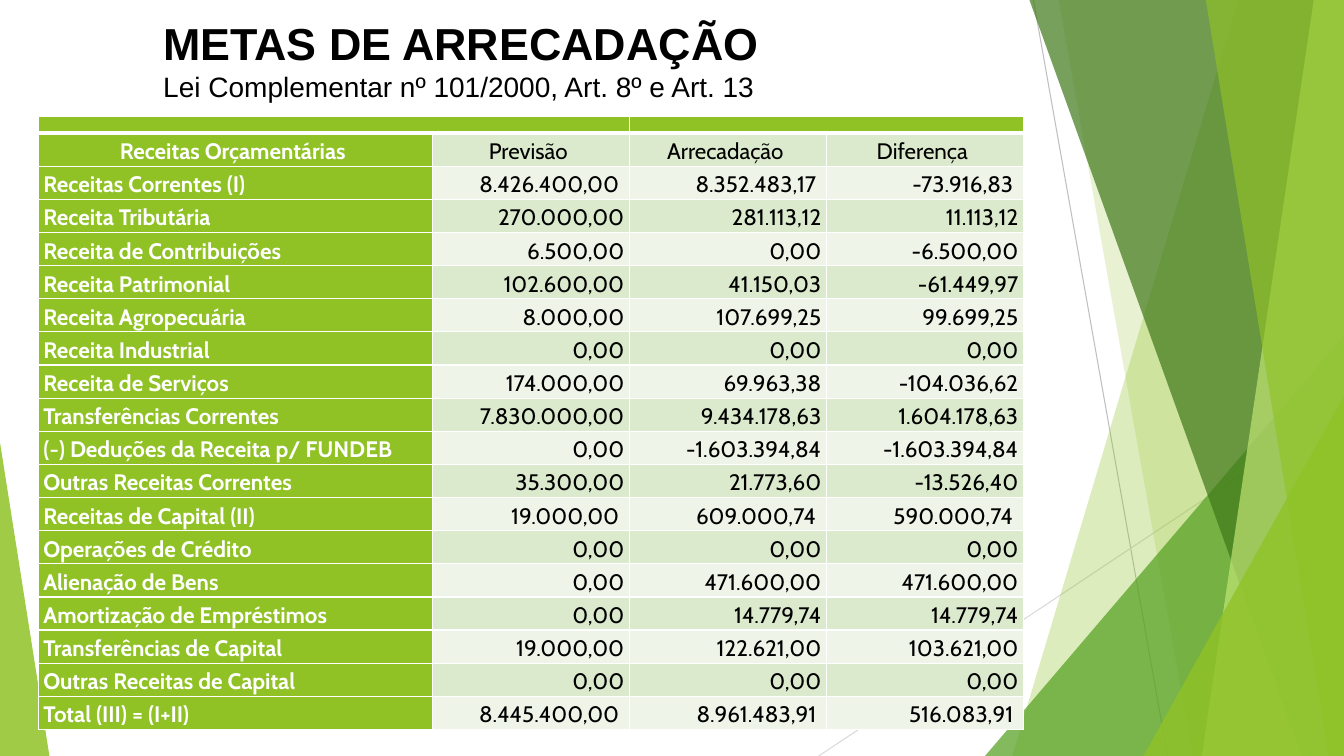
import lxml.etree
import pptx
import pptx.dml.color
import pptx.enum.shapes
import pptx.enum.text
import pptx.oxml.ns
import pptx.util

Inches = pptx.util.Inches
Pt = pptx.util.Pt
qn = pptx.oxml.ns.qn
ALIGN = pptx.enum.text.PP_ALIGN
GREEN, WHITE, BLACK = "90C226", "FFFFFF", "000000"
BANDS = ("DBE9CD", "EEF4E8")

HEADINGS = ("Receitas Orçamentárias ", "Previsão ", "Arrecadação ", "Diferença ")
REVENUES = [
    ("Receitas Correntes (I)", "8.426.400,00 ", "8.352.483,17 ", "-73.916,83 "),
    ("Receita Tributária", "270.000,00", "281.113,12", "11.113,12"),
    ("Receita de Contribuições", "6.500,00", "0,00", "-6.500,00"),
    ("Receita Patrimonial", "102.600,00", "41.150,03", "-61.449,97"),
    ("Receita Agropecuária", "8.000,00", "107.699,25", "99.699,25"),
    ("Receita Industrial", "0,00", "0,00", "0,00"),
    ("Receita de Serviços", "174.000,00", "69.963,38", "-104.036,62"),
    ("Transferências Correntes", "7.830.000,00", "9.434.178,63", "1.604.178,63"),
    ("(-) Deduções da Receita p/ FUNDEB", "0,00", "-1.603.394,84", "-1.603.394,84"),
    ("Outras Receitas Correntes", "35.300,00", "21.773,60", "-13.526,40"),
    ("Receitas de Capital (II)", "19.000,00 ", "609.000,74 ", "590.000,74 "),
    ("Operações de Crédito", "0,00", "0,00", "0,00"),
    ("Alienação de Bens", "0,00", "471.600,00", "471.600,00"),
    ("Amortização de Empréstimos", "0,00", "14.779,74", "14.779,74"),
    ("Transferências de Capital", "19.000,00", "122.621,00", "103.621,00"),
    ("Outras Receitas de Capital", "0,00", "0,00", "0,00"),
    ("Total (III) = (I+II)", "8.445.400,00 ", "8.961.483,91 ", "516.083,91 "),
]


def rgb(color):
    return pptx.dml.color.RGBColor.from_string(color)


def paint(shape, color, opacity):
    shape.shadow.inherit = False
    shape.fill.solid()
    shape.fill.fore_color.rgb = rgb(color)
    shape.line.fill.background()
    tint = shape.element.spPr.find(qn("a:solidFill")).find(qn("a:srgbClr"))
    lxml.etree.SubElement(tint, qn("a:alpha"), val=str(opacity * 1000))


def add_ray(slide, start, end, color):
    ray = slide.shapes.add_connector(
        pptx.enum.shapes.MSO_CONNECTOR.STRAIGHT, *map(Inches, start + end))
    ray.line.color.rgb = rgb(color)
    ray.line.width = Pt(0.75)
    lxml.etree.SubElement(ray.element.spPr, qn("a:effectLst"))


def add_shard(slide, box, top_xs, bottom_xs, color, opacity):
    left, top, _, height = box
    corners = [(left + x, top) for x in top_xs]
    corners += [(left + x, top + height) for x in reversed(bottom_xs)]
    points = [(Inches(x), Inches(y)) for x, y in corners]
    outline = slide.shapes.build_freeform(*points[0])
    outline.add_line_segments(points[1:], close=True)
    paint(outline.convert_to_shape(), color, opacity)


def add_wedge(slide, box, apex, color, opacity):
    wedge = slide.shapes.add_shape(
        pptx.enum.shapes.MSO_SHAPE.ISOSCELES_TRIANGLE, *map(Inches, box))
    wedge.adjustments[0] = apex
    paint(wedge, color, opacity)


def add_corner_wedge(slide, box, width, height, color, opacity):
    left, top, panel_width, panel_height = box
    add_wedge(slide, (left + panel_width - width, top + panel_height - height,
                      width, height), 1, color, opacity)


def add_facets(slide, box):
    left, top, width, height = box
    bottom = top + height
    add_ray(slide, (left + 0.48, top), (left + 1.81, bottom), "BFBFBF")
    add_ray(slide, (left + width, top + 4.03), (left - 1.65, bottom), "D9D9D9")
    add_shard(slide, box, (2.51, width), (0.27, width), GREEN, 30)
    add_shard(slide, box, (0.73, width), (2.06, width), GREEN, 20)
    add_corner_wedge(slide, box, width, 4.17, "54A021", 72)
    add_shard(slide, box, (0.44, width), (3.14, width), "3F7819", 70)
    add_shard(slide, box, (3.26, width), (2.15, width), "C0E474", 70)
    add_shard(slide, box, (2.19, width), (3.41, width), GREEN, 65)
    add_corner_wedge(slide, box, 1.99, 3.57, GREEN, 80)


def style_cell(cell, fill, top=1, bottom=1):
    properties = cell._tc.get_or_add_tcPr()
    for side, width in (("L", 1), ("R", 1), ("T", top), ("B", bottom)):
        edge = lxml.etree.SubElement(properties, qn("a:ln" + side), w=str(Pt(width)))
        stroke = lxml.etree.SubElement(edge, qn("a:solidFill"))
        lxml.etree.SubElement(stroke, qn("a:srgbClr"), val=WHITE)
    cell.fill.solid()
    cell.fill.fore_color.rgb = rgb(fill)
    cell.margin_left = cell.margin_right = Inches(0.05)
    cell.margin_top = cell.margin_bottom = Inches(0.01)
    cell.vertical_anchor = pptx.enum.text.MSO_ANCHOR.MIDDLE


def write_cell(cell, text, align, is_label):
    entry = cell.text_frame.paragraphs[0]
    entry.text = text
    entry.alignment = align
    entry.line_spacing = 1.15
    entry.font.name = "Cabin"
    entry.font.size = Pt(16)
    entry.font.bold = is_label
    entry.font.color.rgb = rgb(WHITE if is_label else BLACK)


def add_revenue_table(slide, box):
    entries = [HEADINGS] + REVENUES
    revenue = slide.shapes.add_table(
        len(entries) + 1, len(HEADINGS), *map(Inches, box)).table
    width, height = box[2:]
    band_height = 0.17
    for index, column in enumerate(revenue.columns):
        column.width = Inches(width * (0.2 if index else 0.4))
    for index, row in enumerate(revenue.rows):
        row.height = Inches((height - band_height) / len(entries) if index else band_height)

    for index in range(len(HEADINGS)):
        band = revenue.cell(0, index)
        style_cell(band, GREEN, bottom=3)
        blank = band.text_frame.paragraphs[0]
        lxml.etree.SubElement(blank._p, qn("a:endParaRPr"), sz="800")
    for first in (0, 2):
        revenue.cell(0, first).merge(revenue.cell(0, first + 1))

    for row, entry in enumerate(entries, 1):
        for column, text in enumerate(entry):
            is_label = column == 0
            cell = revenue.cell(row, column)
            style_cell(cell, GREEN if is_label else BANDS[(row - 1) % 2],
                       top=3 if row == 1 else 1)
            if row == 1:
                align = ALIGN.CENTER
            else:
                align = ALIGN.LEFT if is_label else ALIGN.RIGHT
            write_cell(cell, text, align, is_label)


def add_heading(slide, box):
    heading = slide.shapes.add_textbox(*map(Inches, box)).text_frame
    heading.word_wrap = True
    heading.vertical_anchor = pptx.enum.text.MSO_ANCHOR.TOP
    title, law = heading.paragraphs[0], heading.add_paragraph()
    title.text = "METAS DE ARRECADAÇÃO"
    law.text = "Lei Complementar nº 101/2000, Art. 8º e Art. 13"
    for line, size, bold in ((title, 32, True), (law, 20, False)):
        line.font.name = "Arial"
        line.font.size = Pt(size)
        line.font.bold = bold
        line.font.color.rgb = rgb(BLACK)


def main():
    deck = pptx.Presentation()
    deck.slide_width, deck.slide_height = Inches(13.33), Inches(7.5)
    slide = deck.slides.add_slide(deck.slide_layouts[6])
    add_facets(slide, (9.77, 0, 3.56, 7.5))
    add_wedge(slide, (0, 4.39, 0.49, 3.11), 0, GREEN, 85)
    add_revenue_table(slide, (0.38, 1.15, 9.77, 6.05))
    add_heading(slide, (1.52, 0.11, 7.85, 1.28))
    deck.save("out.pptx")


if __name__ == "__main__":
    main()
